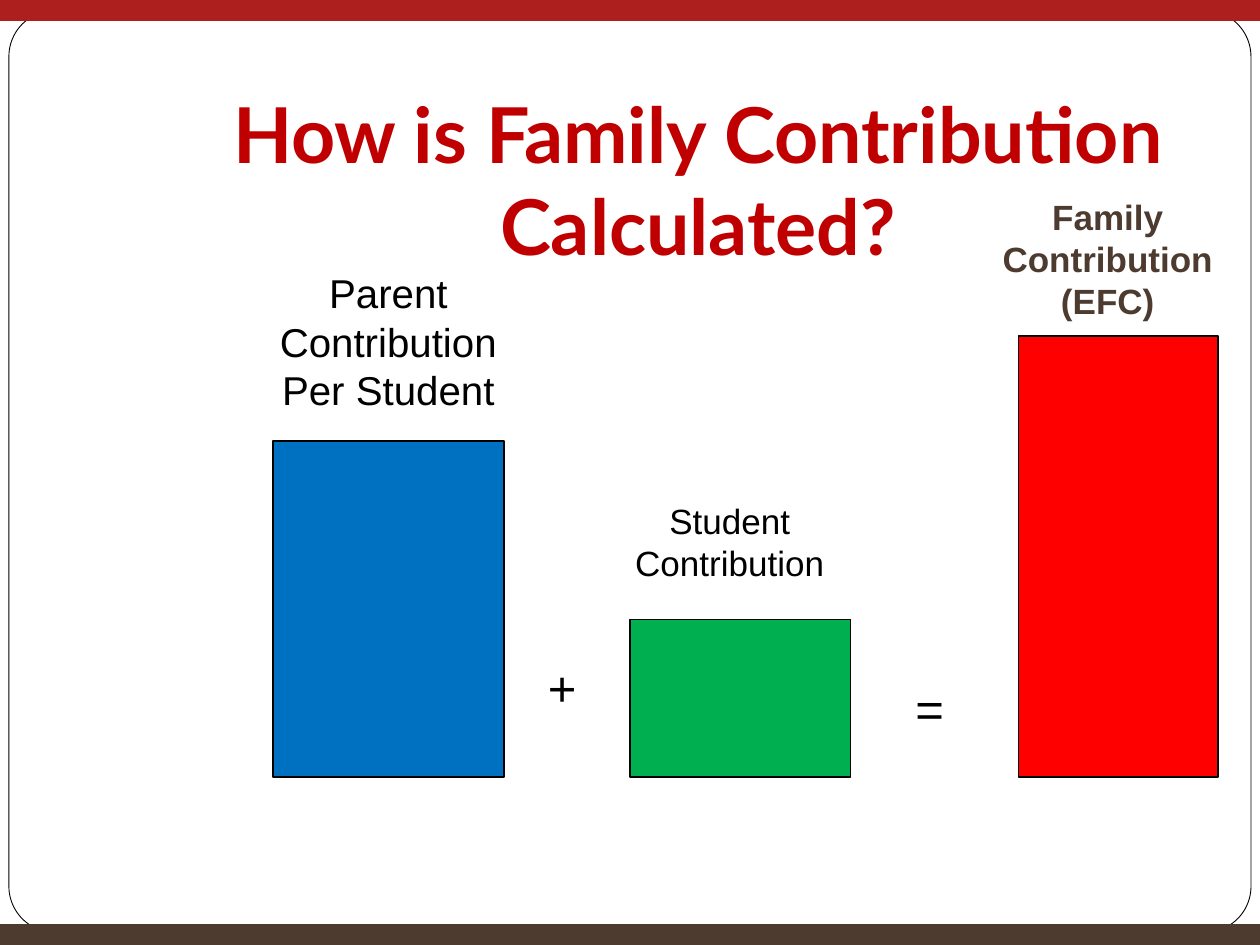
from pptx import Presentation
from pptx.dml.color import RGBColor
from pptx.enum.shapes import MSO_SHAPE
from pptx.enum.text import MSO_ANCHOR, MSO_AUTO_SIZE, PP_ALIGN
from pptx.util import Inches, Pt

RECT, ROUNDED = MSO_SHAPE.RECTANGLE, MSO_SHAPE.ROUNDED_RECTANGLE
LEFT, CENTER = PP_ALIGN.LEFT, PP_ALIGN.CENTER

THEME = {
    "white": "FFFFFF", "ink": "000000", "top": "AD1F1F", "brown": "4E3B30",
    "title": "C00000", "parent": "0070C0", "student": "00B050", "family": "FF0000",
    "title_font": "Lato", "label_font": "Arial",
    "title_size": 44, "large": 23, "label": 20, "sign": 28,
}

prs = Presentation()
prs.slide_width, prs.slide_height = Inches(10), Inches(7.5)
slide = prs.slides.add_slide(prs.slide_layouts[5])

# Grid of 120 columns by 90 rows
COLS, ROWS = 120, 90
COL, ROW = prs.slide_width / COLS, prs.slide_height / ROWS
BAND = 2
BASELINE = 74


def area(col, row, cols, rows):
    return int(col * COL), int(row * ROW), int(cols * COL), int(rows * ROW)


def add_block(preset, place, fill, line_width=0):
    block = slide.shapes.add_shape(preset, *area(*place))
    block.shadow.inherit = False
    block.fill.solid()
    block.fill.fore_color.rgb = RGBColor.from_string(THEME[fill])
    if line_width:
        block.line.color.rgb = RGBColor.from_string(THEME["ink"])
        block.line.width = Pt(line_width)
    else:
        block.line.fill.background()
    return block


# Frame and edge bands
frame = add_block(ROUNDED, (0.85, 1, COLS - 1.7, ROWS - 2.2), "white", 0.5)
frame.adjustments[0] = 0.05
add_block(RECT, (0, 0, COLS, BAND), "top")
add_block(RECT, (0, ROWS - BAND, COLS, BAND), "brown")

# Title, brought in front of the frame
title = slide.shapes.title
title.element.getparent().append(title.element)
title.left, title.top, title.width, title.height = area(13, 5, 107, 22)
heading = title.text_frame
heading.word_wrap = True
heading.auto_size = MSO_AUTO_SIZE.NONE
heading.vertical_anchor = MSO_ANCHOR.BOTTOM
heading.margin_bottom = Inches(0.1)
heading.paragraphs[0].alignment = CENTER
question = heading.paragraphs[0].add_run()
question.text = "How is Family Contribution Calculated?"
question.font.name = THEME["title_font"]
question.font.size = Pt(THEME["title_size"])
question.font.bold = True
question.font.color.rgb = RGBColor.from_string(THEME["title"])

# Contribution bars, standing on one baseline
for col, cols, rows, fill in [
    (26, 22, 32, "parent"),
    (60, 21, 15, "student"),
    (97, 19, 42, "family"),
]:
    add_block(RECT, (col, BASELINE - rows, cols, rows), fill, 1)

# Bar labels and the signs between the bars
for lines, place, size, color, bold, align in [
    (["Parent Contribution", "Per Student"], (24, 25, 26, 15), "large", "ink", False, CENTER),
    (["Student Contribution"], (59, 47, 21, 9), "label", "ink", False, CENTER),
    (["Family Contribution (EFC)"], (94, 18, 23, 13), "label", "brown", True, CENTER),
    (["+"], (51, 62, 7, 16.5), "sign", "ink", False, LEFT),
    (["="], (86, 64, 7, 12), "sign", "ink", False, LEFT),
]:
    label = slide.shapes.add_textbox(*area(*place)).text_frame
    label.word_wrap = True
    label.auto_size = MSO_AUTO_SIZE.SHAPE_TO_FIT_TEXT
    for number, line in enumerate(lines):
        paragraph = label.add_paragraph() if number else label.paragraphs[0]
        paragraph.alignment = align
        run = paragraph.add_run()
        run.text = line
        run.font.name = THEME["label_font"]
        run.font.size = Pt(THEME[size])
        run.font.bold = bold
        run.font.color.rgb = RGBColor.from_string(THEME[color])

prs.save("out.pptx")
